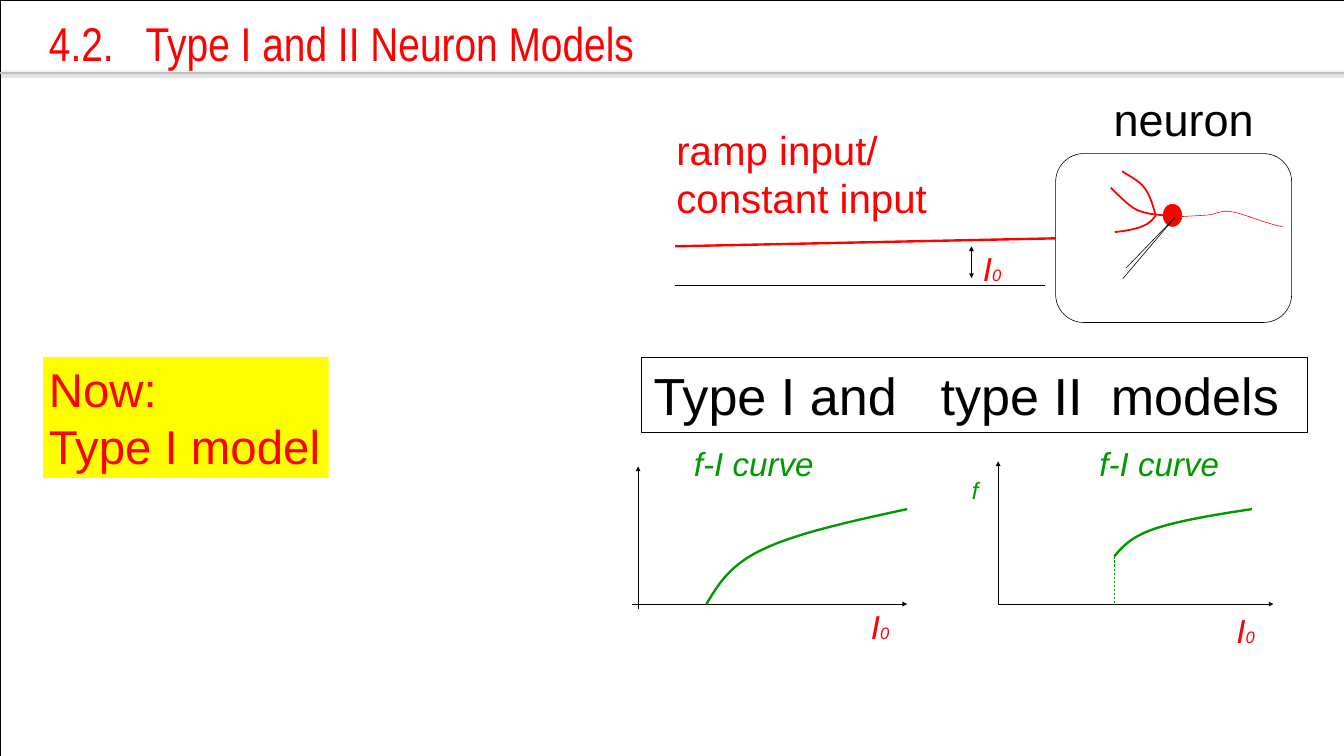
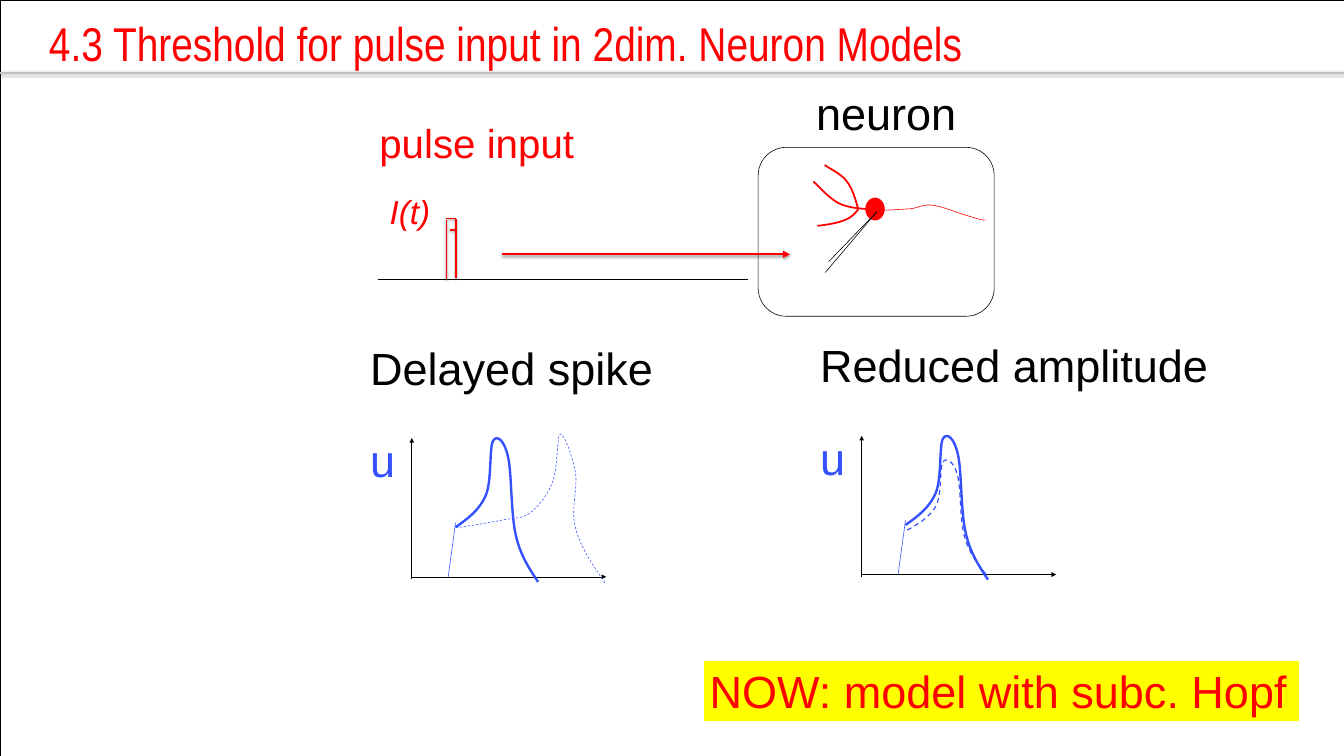
from dataclasses import dataclass

from lxml.etree import SubElement
from pptx import Presentation
from pptx.dml.color import RGBColor
from pptx.enum.dml import MSO_LINE
from pptx.enum.shapes import MSO_CONNECTOR, MSO_SHAPE
from pptx.enum.text import MSO_ANCHOR, MSO_AUTO_SIZE, PP_ALIGN
from pptx.oxml.ns import qn
from pptx.util import Inches, Pt


@dataclass(frozen=True)
class Theme:
    black: RGBColor = RGBColor(0, 0, 0)
    red: RGBColor = RGBColor(255, 0, 0)
    green: RGBColor = RGBColor(0, 153, 0)
    blue: RGBColor = RGBColor(0x35, 0x50, 0xFE)
    yellow: RGBColor = RGBColor(255, 255, 0)
    gray: RGBColor = RGBColor(0xBF, 0xBF, 0xBF)
    title_font: str = "Arial Narrow"
    body_font: str = "Arial"
    title: int = 60
    banner: int = 66
    heading: int = 57
    caption: int = 51
    symbol: int = 42
    axis: int = 30
    subscript: int = 21
    thin: float = 0.75
    medium: float = 2.25
    thick: float = 3


THEME = Theme()

# Grid: cells one inch square, counted in columns and rows
CELL = Inches(1)
COLUMNS, ROWS = 23.63, 13.29
WIDE_INSET = (0.21, 0.11)


def write_text(shape, text, box, size, color=THEME.black, font=THEME.body_font,
               italic=False, subscript="", inset=(0.1, 0.05), tabs=(),
               fill=None, border=None):
    """Place a shape on the grid and fill it with formatted text."""
    shape.left, shape.top, shape.width, shape.height = (round(v * CELL) for v in box)
    if fill is not None:
        shape.fill.solid()
        shape.fill.fore_color.rgb = fill
    if border is not None:
        shape.line.color.rgb = border
        shape.line.width = Pt(THEME.thin)
    frame = shape.text_frame
    frame.auto_size = MSO_AUTO_SIZE.NONE
    frame.word_wrap = False
    frame.vertical_anchor = MSO_ANCHOR.TOP
    frame.margin_left = frame.margin_right = round(inset[0] * CELL)
    frame.margin_top = frame.margin_bottom = round(inset[1] * CELL)
    frame.text = text
    if subscript:
        frame.paragraphs[-1].add_run().text = subscript
    for paragraph in frame.paragraphs:
        paragraph.alignment = PP_ALIGN.LEFT
        if tabs:
            tab_list = SubElement(paragraph._p.get_or_add_pPr(), qn("a:tabLst"))
            for position in tabs:
                SubElement(tab_list, qn("a:tab"), pos=str(round(position * CELL)), algn="l")
        for index, run in enumerate(paragraph.runs):
            run.font.size = Pt(THEME.subscript if index else size)
            run.font.name = font
            run.font.italic = italic
            run.font.color.rgb = color


def draw_stroke(shapes, points, color=THEME.black, width=THEME.thin, origin=(0, 0),
                dash=False, head=False, tail=False, shadow=False):
    """Two points make a line; more are a chain of cubic Bézier curves."""
    points = [(round((origin[0] + x) * CELL), round((origin[1] + y) * CELL))
              for x, y in points]
    if len(points) == 2:
        stroke = shapes.add_connector(MSO_CONNECTOR.STRAIGHT, *points[0], *points[1])
    else:
        builder = shapes.build_freeform(*points[0])
        builder.add_line_segments(points[1:], close=False)
        stroke = builder.convert_to_shape()
        stroke.fill.background()
        # Turn every three segments into one cubic curve
        outline_path = next(stroke._element.iter(qn("a:path")))
        segments = outline_path.findall(qn("a:lnTo"))
        for first in range(0, len(segments), 3):
            curve = SubElement(outline_path, qn("a:cubicBezTo"))
            for segment in segments[first:first + 3]:
                curve.append(segment[0])
                outline_path.remove(segment)
    stroke.line.color.rgb = color
    stroke.line.width = Pt(width)
    if dash:
        stroke.line.dash_style = MSO_LINE.DASH
    # Arrowheads and shadow
    properties = stroke._element.spPr
    outline = properties.find(qn("a:ln"))
    for wanted, tag in ((head, "a:headEnd"), (tail, "a:tailEnd")):
        if wanted:
            SubElement(outline, qn(tag), type="triangle")
    effects = SubElement(properties, qn("a:effectLst"))
    if shadow:
        outer = SubElement(effects, qn("a:outerShdw"), blurRad=str(Pt(3.1)),
                           dist=str(Pt(1.6)), dir="5400000", rotWithShape="0")
        tint = SubElement(outer, qn("a:srgbClr"), val=str(THEME.black))
        SubElement(tint, qn("a:alpha"), val="38000")


presentation = Presentation()
presentation.slide_width = round(COLUMNS * CELL)
presentation.slide_height = round(ROWS * CELL)
title_only = presentation.slide_layouts[5]

# Neuron parts, measured from the corner of its cell box
axon = [(2.16, 1.11), (2.34, 1.1), (2.53, 1.09), (2.68, 1.08), (2.84, 1.06), (2.9, 0.99),
        (3.08, 1.02), (3.25, 1.04), (3.58, 1.18), (3.74, 1.22), (3.89, 1.27), (3.95, 1.28),
        (4, 1.28)]
dendrites = [
    [(2.02, 1.09), (1.82, 1.08), (1.61, 1.07), (1.43, 0.99), (1.26, 0.91), (1.05, 0.67),
     (0.97, 0.6)],
    [(1.76, 1.09), (1.7, 1.16), (1.64, 1.24), (1.52, 1.28), (1.4, 1.33), (1.22, 1.36),
     (1.04, 1.38)],
    [(1.76, 1.09), (1.71, 0.91), (1.66, 0.73), (1.56, 0.6), (1.47, 0.47), (1.23, 0.36),
     (1.17, 0.31)],
]
electrode_tip = (2.09, 1.13)
electrode_ends = [(1.18, 2.2), (1.24, 2.01)]

# Shared parts: title, frame, divider, neuron, input baseline
slides = []
for title, neuron in (
    ("4.2.\tType I and II Neuron Models", (18.56, 2.7)),
    ("4.3 Threshold for pulse input in 2dim. Neuron Models", (13.33, 2.59)),
):
    slide = presentation.slides.add_slide(title_only)
    slides.append(slide)
    shapes = slide.shapes
    write_text(shapes.title, title, (0.76, 0.2, 22.81, 1.61), THEME.title, THEME.red,
               THEME.title_font, tabs=(1.7,) if "\t" in title else ())
    frame = shapes.add_shape(MSO_SHAPE.RECTANGLE, 0, 0, presentation.slide_width,
                             presentation.slide_height)
    draw_stroke(shapes, [(0, 1.28), (COLUMNS, 1.28)], THEME.gray, 2, shadow=True)

    left, top = neuron
    write_text(shapes.add_textbox(0, 0, 0, 0), "neuron",
               (left + 0.92, top - 1.14, 3.68, 1.06), THEME.heading)
    parts = shapes.add_group_shape().shapes
    soma = parts.add_shape(MSO_SHAPE.OVAL, round((left + 1.89) * CELL),
                           round((top + 0.89) * CELL), round(0.33 * CELL), round(0.39 * CELL))
    draw_stroke(parts, axon, THEME.red, origin=neuron)
    for dendrite in dendrites:
        draw_stroke(parts, dendrite, THEME.red, THEME.medium, neuron)
    for end in electrode_ends:
        draw_stroke(parts, [end, electrode_tip], origin=neuron)
    cell_box = parts.add_shape(MSO_SHAPE.ROUNDED_RECTANGLE, round(left * CELL),
                               round(top * CELL), round(4.15 * CELL), round(2.97 * CELL))
    for shape, color in ((frame, THEME.black), (soma, THEME.red), (cell_box, THEME.black)):
        shape.shadow.inherit = False
        shape.fill.background()
        shape.line.color.rgb = color
        shape.line.width = Pt(THEME.thin)
    soma.fill.solid()
    soma.fill.fore_color.rgb = THEME.red
    draw_stroke(shapes, [(-6.69, 2.32), (-0.18, 2.32)], origin=neuron)

# Slide 1: ramp input
shapes = slides[0].shapes
draw_stroke(shapes, [(11.87, 4.33), (18.56, 4.19)], THEME.red, THEME.thick)
draw_stroke(shapes, [(17.08, 4.33), (17.08, 4.89)], head=True, tail=True)
write_text(shapes.add_textbox(0, 0, 0, 0), "ramp input/\nconstant input",
           (11.68, 2.09, 4.88, 1.93), THEME.caption, THEME.red, inset=WIDE_INSET)
for left, top in ((17.07, 4.26), (15.1, 10.55), (21.53, 10.62)):
    write_text(shapes.add_textbox(0, 0, 0, 0), "I", (left, top, 0.75, 0.92), THEME.symbol,
               THEME.red, italic=True, subscript="0", inset=WIDE_INSET)

# Slide 1: f-I curves
write_text(shapes.add_textbox(0, 0, 0, 0), "Type I and\ttype II\tmodels",
           (11.28, 6.28, 11.71, 1.32), THEME.banner, inset=WIDE_INSET,
           tabs=(5.05, 8.04), border=THEME.black)
for start, end in (
    ((11.11, 10.62), (15.95, 10.62)), ((11.22, 10.71), (11.22, 8.2)),
    ((17.55, 10.62), (22.39, 10.62)), ((17.55, 10.62), (17.55, 8.11)),
):
    draw_stroke(shapes, [start, end], tail=True)
for curve in (
    [(12.42, 10.62), (12.63, 10.27), (12.84, 9.92), (13.43, 9.65), (14.02, 9.37),
     (14.98, 9.16), (15.95, 8.95)],
    [(19.59, 9.78), (19.74, 9.61), (19.88, 9.44), (20.29, 9.3), (20.69, 9.16),
     (21.35, 9.05), (22.01, 8.95)],
):
    draw_stroke(shapes, curve, THEME.green, THEME.thick)
draw_stroke(shapes, [(19.6, 9.78), (19.6, 10.62)], THEME.green, dash=True)
for text, box, size in (
    ("f-I curve", (11.99, 7.69, 2.55, 0.92), THEME.symbol),
    ("f-I curve", (19.12, 7.69, 2.55, 0.92), THEME.symbol),
    ("f", (16.88, 8.25, 0.54, 0.72), THEME.axis),
):
    write_text(shapes.add_textbox(0, 0, 0, 0), text, box, size, THEME.green,
               italic=True, inset=WIDE_INSET)

# Slide 2: pulse input
shapes = slides[1].shapes
write_text(shapes.add_textbox(0, 0, 0, 0), "pulse input", (6.46, 1.97, 3.89, 1.07),
           THEME.caption, THEME.red, inset=WIDE_INSET)
write_text(shapes.add_textbox(0, 0, 0, 0), "I(t)", (6.64, 3.25, 1.14, 0.92),
           THEME.symbol, THEME.red, italic=True, inset=WIDE_INSET)
for start, end, dash in (
    ((7.85, 3.87), (7.85, 4.91), False), ((8.02, 3.85), (8.02, 4.89), False),
    ((7.85, 3.84), (8.02, 3.84), False), ((7.91, 4.04), (8.08, 4.04), True),
):
    draw_stroke(shapes, [start, end], THEME.red, 2, dash=dash, shadow=True)
draw_stroke(shapes, [(8.83, 4.47), (13.89, 4.47)], THEME.red, THEME.thick,
            tail=True, shadow=True)

# Slide 2: spike plots, measured from the crossing of the axes
spike = [(0.77, -0.87), (0.98, -1.02), (1.19, -1.17), (1.3, -1.43), (1.41, -1.68),
         (1.36, -2.28), (1.43, -2.39), (1.5, -2.51), (1.63, -2.39), (1.69, -2.12),
         (1.76, -1.84), (1.74, -1.1), (1.83, -0.73), (1.91, -0.37), (2.07, -0.14),
         (2.22, 0.09)]
delayed = [(0.77, -0.86), (1.06, -0.9), (1.34, -0.95), (1.56, -0.99), (1.78, -1.04),
           (1.94, -1.01), (2.09, -1.13), (2.24, -1.25), (2.4, -1.45), (2.48, -1.68),
           (2.57, -1.92), (2.55, -2.49), (2.61, -2.51), (2.68, -2.53), (2.83, -2.1),
           (2.88, -1.82), (2.92, -1.54), (2.79, -1.18), (2.88, -0.86), (2.96, -0.53),
           (3.18, -0.21), (3.4, 0.11)]
reduced = [(0.8, -0.78), (1, -0.89), (1.2, -1.01), (1.31, -1.21), (1.41, -1.41),
           (1.37, -1.89), (1.43, -1.98), (1.49, -2.07), (1.62, -1.98), (1.68, -1.76),
           (1.75, -1.54), (1.72, -0.96), (1.81, -0.66), (1.89, -0.37), (2.04, -0.19),
           (2.18, -0.01)]
for heading, width, origin, variant, variant_width in (
    ("Delayed spike", 5.23, (7.24, 10.14), delayed, THEME.thin),
    ("Reduced amplitude", 7.32, (15.15, 10.1), reduced, 1.5),
):
    left, top = origin[0] - 0.83, origin[1]
    write_text(shapes.add_textbox(0, 0, 0, 0), heading, (left, top - 4.21, width, 1.06),
               THEME.heading)
    write_text(shapes.add_textbox(0, 0, 0, 0), "u", (left, top - 2.59, 0.61, 1.06),
               THEME.heading, THEME.blue)
    draw_stroke(shapes, [(0, 0.04), (0, -2.44)], origin=origin, tail=True)
    draw_stroke(shapes, [(0, 0), (3.42, 0)], origin=origin, tail=True)
    draw_stroke(shapes, [(0.77, -0.95), (0.64, 0)], THEME.blue, origin=origin)
    draw_stroke(shapes, spike, THEME.blue, THEME.thick, origin)
    draw_stroke(shapes, variant, THEME.blue, variant_width, origin, dash=True)

# Highlighted next steps
for slide, text, box, size in (
    (slides[0], "Now:\nType I model", (0.76, 6.28, 5.02, 2.12), THEME.title),
    (slides[1], "NOW: model with subc. Hopf", (12.38, 11.62, 10.46, 1.06), THEME.heading),
):
    write_text(slide.shapes.add_textbox(0, 0, 0, 0), text, box, size, THEME.red,
               fill=THEME.yellow)

presentation.save("out.pptx")
